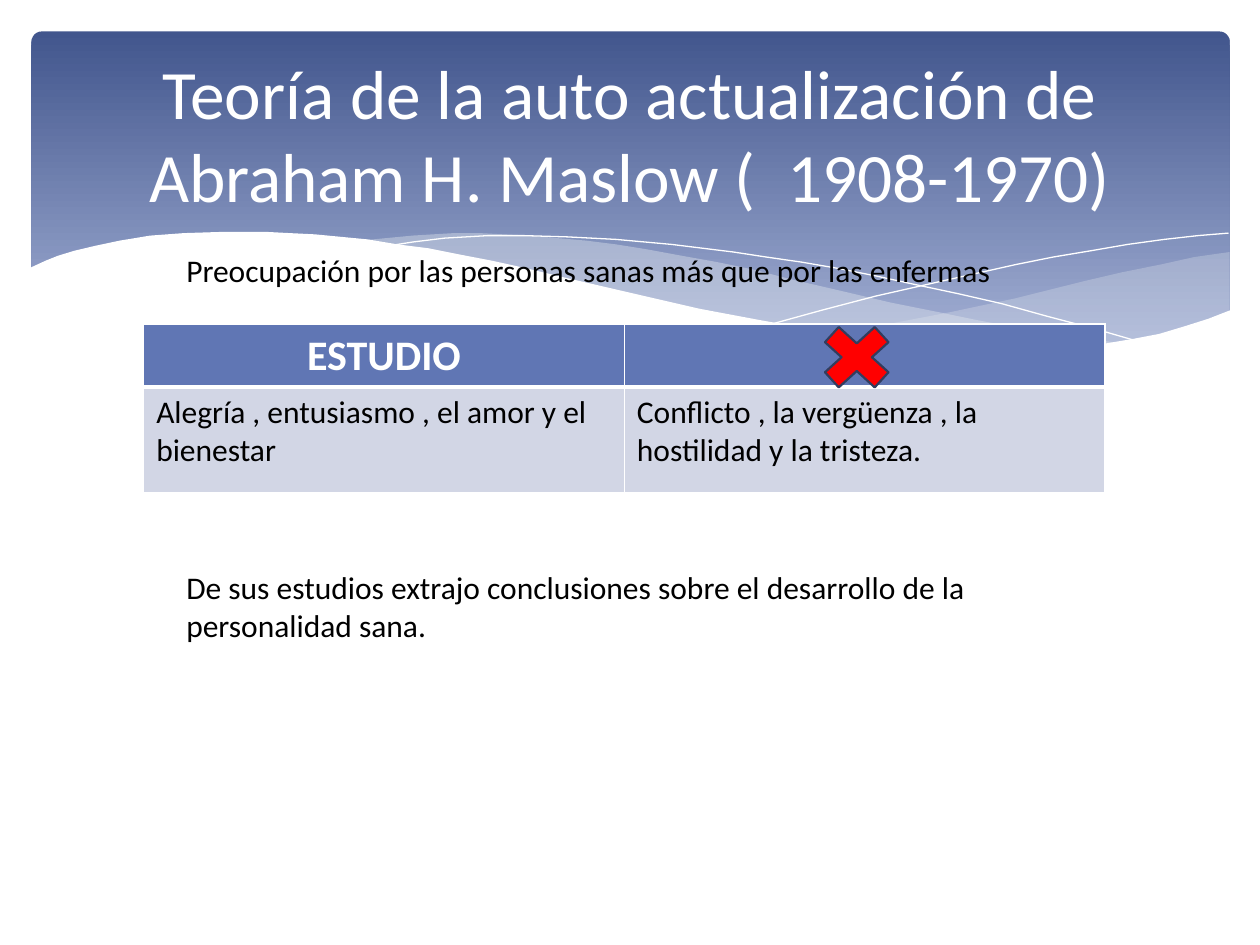
"""Build a slide on Maslow's self-actualization theory with a wave banner and a table."""
from lxml import etree
from pptx import Presentation
from pptx.dml.color import RGBColor
from pptx.enum.shapes import MSO_SHAPE
from pptx.enum.text import MSO_ANCHOR, PP_ALIGN
from pptx.oxml.ns import qn
from pptx.util import Inches, Pt

ROUNDED, CROSS = MSO_SHAPE.ROUNDED_RECTANGLE, MSO_SHAPE.MATH_MULTIPLY
MIDDLE = MSO_ANCHOR.MIDDLE
CENTER, LEFT = PP_ALIGN.CENTER, PP_ALIGN.LEFT

FONT = "Calibri"
WHITE = RGBColor(0xFF, 0xFF, 0xFF)
BLACK = RGBColor(0, 0, 0)
RED = RGBColor(0xFF, 0, 0)
NAVY = RGBColor(0x42, 0x56, 0x8D)
PERIWINKLE = RGBColor(0xA0, 0xAD, 0xD2)
MIST = RGBColor(0xE4, 0xE9, 0xEF)
HEADER_BLUE = RGBColor(0x60, 0x76, 0xB4)
BODY_BLUE = RGBColor(0xD2, 0xD6, 0xE5)
CROSS_EDGE = RGBColor(0x32, 0x3D, 0x5E)

TITLE = "Teoría de la auto actualización de Abraham H. Maslow (  1908-1970)"
NOTES = [
    ("Preocupación por las personas sanas más que por las enfermas", (1.38, 1.94, 7.48, 0.4)),
    ("De sus estudios extrajo conclusiones sobre el desarrollo de la personalidad sana.",
     (1.38, 4.46, 6.65, 0.71)),
]
ROWS = [
    ["ESTUDIO", ""],
    ["Alegría , entusiasmo , el amor y el bienestar",
     "Conflicto , la vergüenza , la hostilidad y la tristeza."],
]
ROW_HEIGHTS = [0.49, 0.84]
TABLE_BOX = (1.14, 2.57, 7.63, sum(ROW_HEIGHTS))

RIGHT_VEIL = [
    (9.76, 2), (9.48, 2.04), (9.21, 2.1), (8.91, 2.16), (8.61, 2.23), (8.05, 2.37),
    (7.53, 2.48), (7.06, 2.57), (6.61, 2.65), (6.91, 2.69), (7.19, 2.72), (7.57, 2.76),
    (8.03, 2.78), (8.44, 2.77), (8.81, 2.73), (9.13, 2.67), (9.42, 2.59), (9.76, 2.47),
]
MIDDLE_VEIL = [
    (8.93, 2.73), (8.66, 2.69), (8.37, 2.65), (8.07, 2.6), (7.75, 2.54), (7.41, 2.47),
    (7.06, 2.4), (6.68, 2.31), (6.29, 2.22), (5.98, 2.14), (5.69, 2.08), (5.41, 2.03),
    (5.14, 1.98), (4.89, 1.94), (4.65, 1.91), (4.42, 1.89), (4.2, 1.87), (3.99, 1.86),
    (3.8, 1.85), (3.61, 1.85), (3.28, 1.87), (2.86, 1.91), (3.23, 1.96), (3.62, 2.03),
    (4.04, 2.11), (4.49, 2.22), (4.91, 2.32), (5.3, 2.4), (5.66, 2.48), (6.01, 2.55),
    (6.34, 2.61), (6.65, 2.66), (6.95, 2.7), (7.22, 2.74), (7.61, 2.77), (7.96, 2.78),
    (8.28, 2.78), (8.57, 2.77),
]
FALLING_LINE = [
    (3.09, 1.95), (3.28, 1.92), (3.53, 1.89), (3.87, 1.87), (4.16, 1.87), (4.5, 1.88),
    (4.89, 1.9), (5.33, 1.94), (5.82, 2), (6.08, 2.04), (6.36, 2.08), (6.65, 2.13),
    (6.95, 2.19), (7.27, 2.26), (7.6, 2.33), (7.95, 2.41), (8.31, 2.51), (8.69, 2.61),
    (9.07, 2.72),
]
RISING_LINE = [
    (6.13, 2.57), (6.53, 2.46), (6.95, 2.35), (7.48, 2.23), (8.06, 2.1), (8.36, 2.04),
    (8.66, 1.99), (8.95, 1.94), (9.24, 1.9), (9.51, 1.87), (9.75, 1.85),
]
WHITE_WAVE = [
    (9.77, 2.46), (9.59, 2.53), (9.4, 2.59), (9.2, 2.65), (8.99, 2.69), (8.75, 2.73),
    (8.5, 2.75), (8.23, 2.77), (7.93, 2.76), (7.61, 2.75), (7.26, 2.72), (6.88, 2.68),
    (6.48, 2.62), (6.03, 2.54), (5.55, 2.45), (5.03, 2.33), (4.47, 2.2), (4.18, 2.13),
    (3.91, 2.07), (3.65, 2.02), (3.4, 1.97), (3.16, 1.94), (2.92, 1.9), (2.71, 1.88),
    (2.5, 1.86), (2.3, 1.85), (2.11, 1.84), (1.77, 1.84), (1.46, 1.85), (1.19, 1.87),
    (0.95, 1.91), (0.76, 1.95), (0.59, 1.99), (0.46, 2.03), (0.36, 2.07), (0.23, 2.13),
    (0.23, 3.29), (9.77, 3.29),
]
VEILS = [(RIGHT_VEIL, MIST, 29), (MIDDLE_VEIL, MIST, 40)]
LINES = [FALLING_LINE, RISING_LINE]


def inches(values):
    return [Inches(value) for value in values]


def add_curve(slide, points, closed):
    start, *rest = [inches(point) for point in points]
    builder = slide.shapes.build_freeform(*start)
    builder.add_line_segments(rest, close=closed)
    curve = builder.convert_to_shape()
    curve.shadow.inherit = False
    return curve


def add_area(slide, points, color, opacity=100):
    area = add_curve(slide, points, True)
    area.fill.solid()
    area.fill.fore_color.rgb = color
    area.line.fill.background()
    if opacity < 100:
        tint = area.element.spPr.find(qn("a:solidFill"))[0]
        etree.SubElement(tint, qn("a:alpha"), val=str(opacity * 1000))


def add_outline(slide, points):
    outline = add_curve(slide, points, False)
    outline.fill.background()
    outline.line.color.rgb = WHITE
    outline.line.width = Pt(0)


def write(frame, text, size, color, align=LEFT, bold=False):
    paragraph = frame.paragraphs[0]
    paragraph.alignment = align
    run = paragraph.add_run()
    run.text = text
    run.font.name, run.font.size, run.font.bold = FONT, Pt(size), bold
    run.font.color.rgb = color


def add_borders(cell, widths):
    properties = cell._tc.get_or_add_tcPr()
    for index, (side, width) in enumerate(widths.items()):
        border = etree.Element(qn(f"a:ln{side}"), w=str(Pt(width)))
        fill = etree.SubElement(border, qn("a:solidFill"))
        etree.SubElement(fill, qn("a:srgbClr"), val=str(WHITE))
        properties.insert(index, border)


def add_banner(slide):
    banner = slide.shapes.add_shape(ROUNDED, *inches((0.25, 0.25, 9.51, 2.7)))
    banner.adjustments[0] = 0.03
    banner.shadow.inherit = False
    banner.line.fill.background()
    banner.fill.gradient()
    banner.fill.gradient_angle = 270
    for stop, position, color in zip(banner.fill.gradient_stops, (0, 0.9), (NAVY, PERIWINKLE)):
        stop.position = position
        stop.color.rgb = color
    for points, color, opacity in VEILS:
        add_area(slide, points, color, opacity)
    for points in LINES:
        add_outline(slide, points)
    add_area(slide, WHITE_WAVE, WHITE)


def add_title(slide):
    title = slide.shapes.title
    title.left, title.top, title.width, title.height = inches((0.5, 0.37, 9, 1.37))
    title.text_frame.vertical_anchor = MIDDLE
    write(title.text_frame, TITLE, 39.6, WHITE, CENTER)
    slide.shapes.element.append(title.element)


def add_note(slide, text, box):
    note = slide.shapes.add_textbox(*inches(box))
    note.text_frame.word_wrap = True
    write(note.text_frame, text, 18, BLACK)


def add_study_table(slide):
    table = slide.shapes.add_table(len(ROWS), len(ROWS[0]), *inches(TABLE_BOX)).table
    for r, (texts, height) in enumerate(zip(ROWS, ROW_HEIGHTS)):
        table.rows[r].height = Inches(height)
        header = r == 0
        for c, text in enumerate(texts):
            cell = table.cell(r, c)
            cell.fill.solid()
            cell.fill.fore_color.rgb = HEADER_BLUE if header else BODY_BLUE
            add_borders(cell, {"L": 1, "R": 1, "T": 1 if header else 3, "B": 3 if header else 1})
            if text and header:
                write(cell.text_frame, text, 24, WHITE, CENTER, True)
            elif text:
                write(cell.text_frame, text, 18, BLACK)


def add_cross(slide):
    cross = slide.shapes.add_shape(CROSS, *inches((6.42, 2.49, 0.76, 0.69)))
    cross.shadow.inherit = False
    cross.fill.solid()
    cross.fill.fore_color.rgb = RED
    cross.line.color.rgb = CROSS_EDGE
    cross.line.width = Pt(1.25)


def main():
    deck = Presentation()
    deck.slide_width, deck.slide_height = inches((10, 7.5))
    slide = deck.slides.add_slide(deck.slide_layouts[5])
    add_banner(slide)
    add_title(slide)
    add_note(slide, *NOTES[0])
    add_study_table(slide)
    add_cross(slide)
    add_note(slide, *NOTES[1])
    deck.save("out.pptx")


if __name__ == "__main__":
    main()
